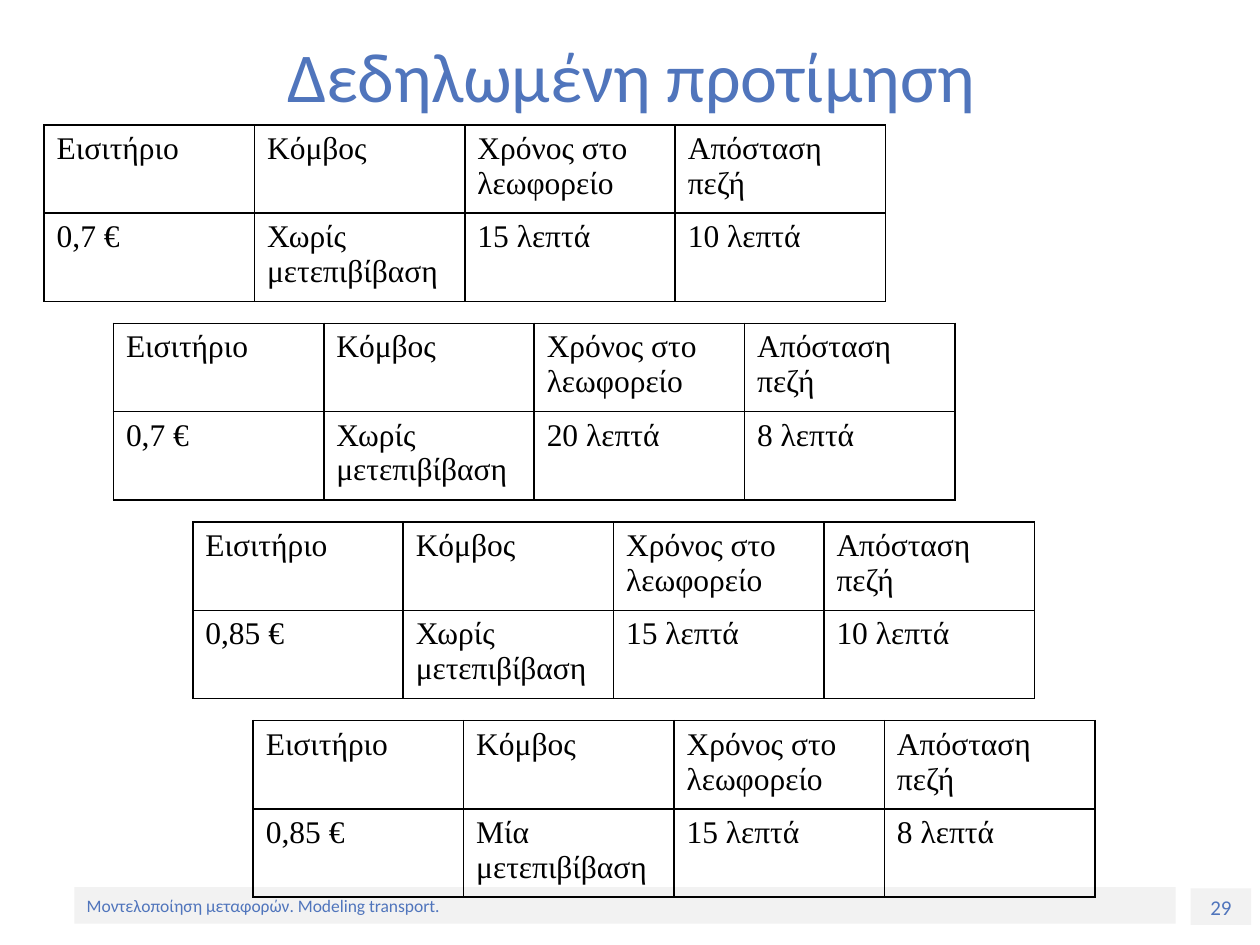
from dataclasses import dataclass

from lxml import etree
from pptx import Presentation
from pptx import util as u
from pptx.dml.color import RGBColor
from pptx.enum import shapes, text
from pptx.oxml.ns import qn

COLORS = {"accent": "5075BC", "band": "F2F2F2", "ink": "000000"}
HEADERS = ("Εισιτήριο", "Κόμβος", "Χρόνος στο λεωφορείο", "Απόσταση πεζή")
COL_WIDTH, ROW_HEIGHT = 1.67, 0.7
FIRST_TOP, LAST_TOP = 0.99, 5.72


@dataclass
class Scenario:
    left: float
    values: tuple[str, ...]


@dataclass
class Label:
    text: str
    box: tuple[float, float, float, float]
    size: int
    align: text.PP_ALIGN = text.PP_ALIGN.CENTER
    anchor: text.MSO_ANCHOR = text.MSO_ANCHOR.MIDDLE
    fill: str | None = None


SCENARIOS = [
    Scenario(0.35, ("0,7 €", "Χωρίς μετεπιβίβαση", "15 λεπτά", "10 λεπτά")),
    Scenario(0.9, ("0,7 €", "Χωρίς μετεπιβίβαση", "20 λεπτά", "8 λεπτά")),
    Scenario(1.53, ("0,85 €", "Χωρίς μετεπιβίβαση", "15 λεπτά", "10 λεπτά")),
    Scenario(2.01, ("0,85 €", "Μία μετεπιβίβαση", "15 λεπτά", "8 λεπτά")),
]

LABELS = [
    Label("29", (9.45, 7.05, 0.48, 0.29), 12, anchor=text.MSO_ANCHOR.TOP, fill="band"),
    Label("Μοντελοποίηση μεταφορών. Modeling transport.", (0.59, 7.04, 8.74, 0.29),
          10, align=text.PP_ALIGN.LEFT, fill="band"),
    Label("Δεδηλωμένη προτίμηση", (0.51, 0.21, 9, 0.77), 40),
]


def rgb(name: str) -> RGBColor:
    return RGBColor.from_string(COLORS[name])


def set_text(tf, content: str, font: str, size: int, color: str) -> None:
    p = tf.paragraphs[0]
    p.text = content
    f = p.runs[0].font
    f.name, f.size, f.color.rgb = font, u.Pt(size), rgb(color)


def add_label(s, label: Label) -> None:
    box = [u.Inches(v) for v in label.box]
    if label.fill:
        sp = s.shapes.add_shape(shapes.MSO_SHAPE.RECTANGLE, *box)
        sp.shadow.inherit = False
        sp.fill.solid()
        sp.fill.fore_color.rgb = rgb(label.fill)
        sp.line.fill.background()
    else:
        sp = s.shapes.add_textbox(*box)
    tf = sp.text_frame
    tf.word_wrap = True
    tf.vertical_anchor = label.anchor
    set_text(tf, label.text, "Calibri", label.size, "accent")
    tf.paragraphs[0].alignment = label.align


def add_borders(cell) -> None:
    tc_pr = cell._tc.get_or_add_tcPr()
    for i, side in enumerate(("lnL", "lnR", "lnT", "lnB")):
        ln = etree.Element(qn(f"a:{side}"), w=str(u.Pt(1)))
        fill = etree.SubElement(ln, qn("a:solidFill"))
        etree.SubElement(fill, qn("a:srgbClr"), val=COLORS["ink"])
        tc_pr.insert(i, ln)  # borders come before the fill


def add_scenario(s, scenario: Scenario, top: float) -> None:
    rows = (HEADERS, scenario.values)
    table = s.shapes.add_table(
        len(rows), len(HEADERS), u.Inches(scenario.left), u.Inches(top),
        u.Inches(COL_WIDTH * len(HEADERS)), u.Inches(ROW_HEIGHT * len(rows))).table
    table.first_row = table.horz_banding = False
    for col in table.columns:
        col.width = u.Inches(COL_WIDTH)
    for r, row in enumerate(rows):
        table.rows[r].height = u.Inches(ROW_HEIGHT)
        for c, content in enumerate(row):
            cell = table.cell(r, c)
            cell.fill.background()
            set_text(cell.text_frame, content, "Times New Roman", 18, "ink")
            add_borders(cell)


def main() -> None:
    prs = Presentation()
    prs.slide_width, prs.slide_height = u.Inches(10), u.Inches(7.5)
    s = prs.slides.add_slide(prs.slide_layouts[6])

    # Footer bands and title
    for label in LABELS:
        add_label(s, label)

    # Staggered scenario tables, evenly spaced down the slide
    step = (LAST_TOP - FIRST_TOP) / (len(SCENARIOS) - 1)
    for i, scenario in enumerate(SCENARIOS):
        add_scenario(s, scenario, FIRST_TOP + i * step)

    prs.save("out.pptx")


if __name__ == "__main__":
    main()
